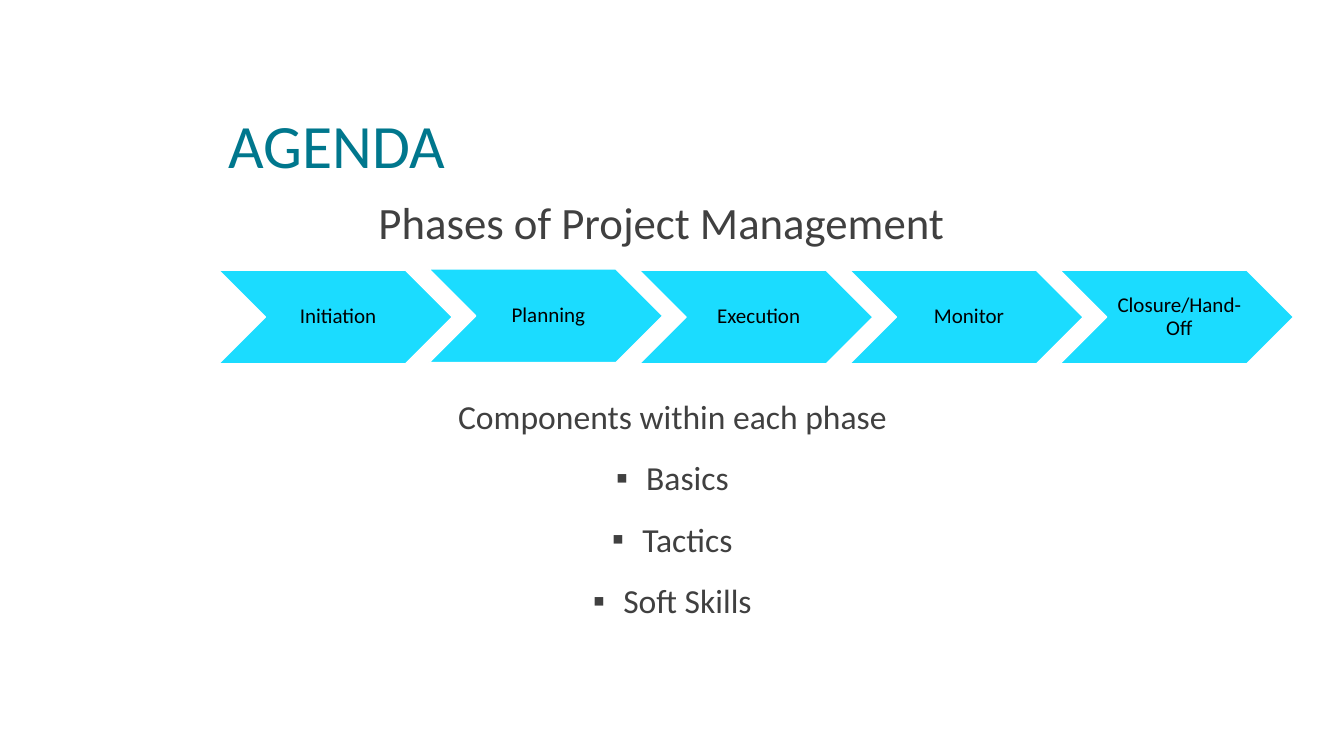
from dataclasses import dataclass

import lxml.etree
import pptx
import pptx.dml.color
import pptx.enum.shapes
import pptx.enum.text
import pptx.oxml.ns
import pptx.util

Cm = pptx.util.Cm
Pt = pptx.util.Pt
Align = pptx.enum.text.PP_ALIGN
Anchor = pptx.enum.text.MSO_ANCHOR

FONT = "Calibri"
TEAL = "00778D"
CYAN = "1BDCFF"
GREY = "404040"
BLACK = "000000"
WHITE = "FFFFFF"

PHASE_LEFT = 5.51
PHASE_PITCH = 5.3
PHASE_WIDTH = 5.89
PHASE_HEIGHT = 2.36
BULLET_INDENT = Cm(0.76)


@dataclass
class Phase:
    label: str
    top: float = 6.81


@dataclass
class Line:
    text: str
    bullet: bool = True


PHASES = [
    Phase("Initiation"),
    Phase("Planning", top=6.78),
    Phase("Execution"),
    Phase("Monitor"),
    Phase("Closure/Hand-Off"),
]

COMPONENTS = [
    Line("Components within each phase", bullet=False),
    Line("Basics"),
    Line("Tactics"),
    Line("Soft Skills"),
]


def colour(value: str) -> pptx.dml.color.RGBColor:
    return pptx.dml.color.RGBColor.from_string(value)


def place(box, left: float, top: float, width: float, height: float) -> None:
    box.left, box.top, box.width, box.height = Cm(left), Cm(top), Cm(width), Cm(height)


def prepare_frame(frame, anchor) -> None:
    frame.word_wrap = True
    frame.auto_size = pptx.enum.text.MSO_AUTO_SIZE.NONE
    frame.vertical_anchor = anchor


def format_paragraph(para, size: float, fill: str, align, spacing: float = 0.9, before: float = 0) -> None:
    para.alignment = align
    para.line_spacing = spacing
    para.space_before = Pt(before)
    for span in para.runs:
        span.font.name = FONT
        span.font.size = Pt(size)
        span.font.color.rgb = colour(fill)


def set_bullet(para, shown: bool) -> None:
    properties = para._p.get_or_add_pPr()
    indent = BULLET_INDENT if shown else 0
    properties.set("marL", str(indent))
    properties.set("indent", str(-indent))
    qualify = pptx.oxml.ns.qn
    if shown:
        lxml.etree.SubElement(properties, qualify("a:buFont"), typeface=FONT)
        lxml.etree.SubElement(properties, qualify("a:buChar"), char="▪")
    else:
        lxml.etree.SubElement(properties, qualify("a:buNone"))


def add_title(page) -> None:
    title = page.shapes.title
    place(title, 5.51, 1.07, 26.04, 3.61)
    prepare_frame(title.text_frame, Anchor.BOTTOM)
    title.text_frame.text = "AGENDA"
    format_paragraph(title.text_frame.paragraphs[0], 44, TEAL, Align.LEFT, spacing=0.85)


def add_components(page, lines: list[Line]) -> None:
    body = page.placeholders[1]
    place(body, 9.91, 9.96, 14.07, 6.63)
    frame = body.text_frame
    prepare_frame(frame, Anchor.TOP)
    frame.text = "\n".join(line.text for line in lines)
    for index, (line, para) in enumerate(zip(lines, frame.paragraphs)):
        set_bullet(para, line.bullet)
        format_paragraph(para, 24, GREY, Align.CENTER, before=18 if index else 0)


def add_phase(page, index: int, phase: Phase) -> None:
    chevron = page.shapes.add_shape(
        pptx.enum.shapes.MSO_SHAPE.CHEVRON,
        Cm(PHASE_LEFT + index * PHASE_PITCH),
        Cm(phase.top),
        Cm(PHASE_WIDTH),
        Cm(PHASE_HEIGHT),
    )
    chevron.shadow.inherit = False
    chevron.fill.solid()
    chevron.fill.fore_color.rgb = colour(CYAN)
    chevron.line.color.rgb = colour(WHITE)
    chevron.line.width = Pt(1)
    frame = chevron.text_frame
    prepare_frame(frame, Anchor.MIDDLE)
    frame.margin_left = Cm(0.18)
    frame.margin_top = frame.margin_right = frame.margin_bottom = Cm(0.05)
    frame.text = phase.label
    format_paragraph(frame.paragraphs[0], 15, BLACK, Align.CENTER)


def add_subtitle(page) -> None:
    box = page.shapes.add_textbox(Cm(6.17), Cm(4.93), Cm(21.01), Cm(2.13))
    prepare_frame(box.text_frame, Anchor.TOP)
    box.text_frame.text = "Phases of Project Management"
    format_paragraph(box.text_frame.paragraphs[0], 32, GREY, Align.CENTER)


def main() -> None:
    deck = pptx.Presentation()
    deck.slide_width = Cm(33.87)
    deck.slide_height = Cm(19.05)
    page = deck.slides.add_slide(deck.slide_layouts[1])
    add_title(page)
    add_components(page, COMPONENTS)
    for index, phase in enumerate(PHASES):
        add_phase(page, index, phase)
    add_subtitle(page)
    deck.save("out.pptx")


if __name__ == "__main__":
    main()
